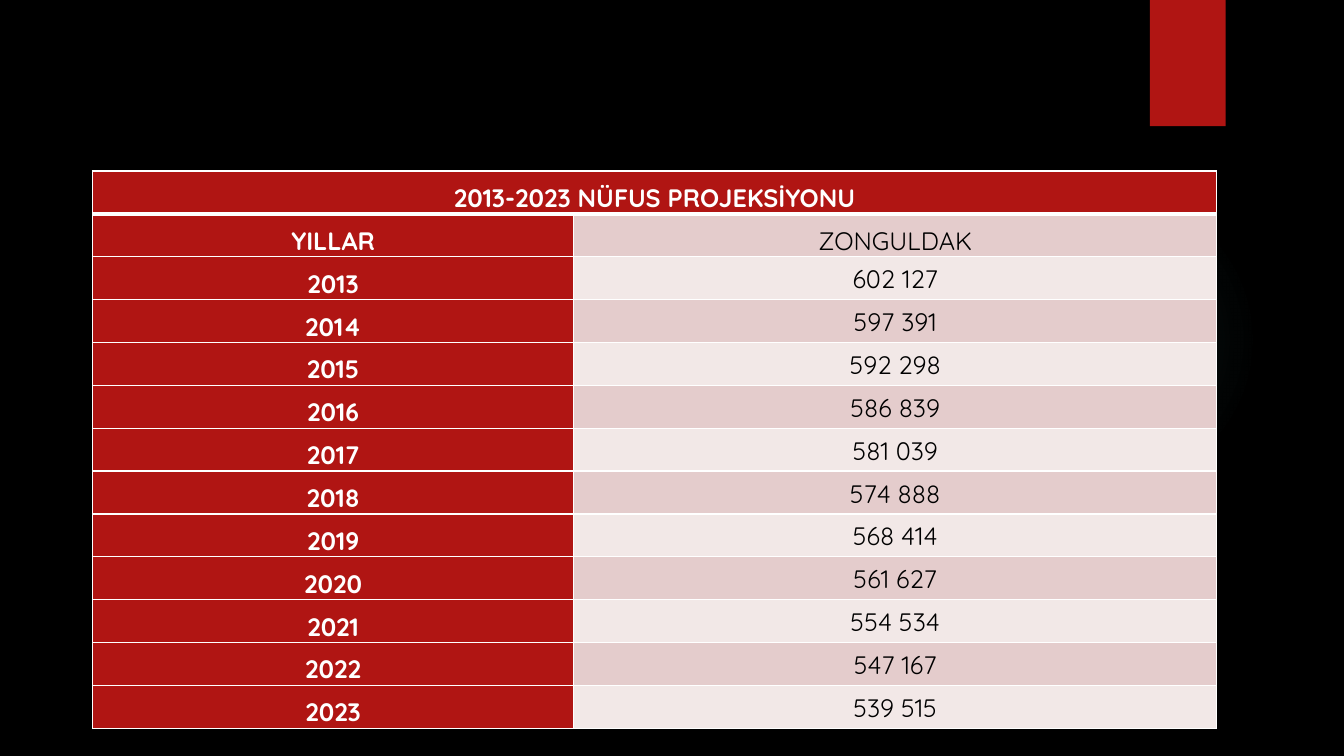
from lxml import etree
from pptx import Presentation
from pptx import util as u
from pptx.dml.color import RGBColor
from pptx.enum import shapes, text
from pptx.oxml import ns

COLORS = {"back": "000000", "red": "B01513", "white": "FFFFFF", "black": "000000",
          "rose": "E4CCCC", "pale": "F2E8E7", "glow": "50B9C1"}
POPULATION = ["602 127", "597 391", "592 298", "586 839", "581 039", "574 888",
              "568 414", "561 627", "554 534", "547 167", "539 515"]
ROWS = [("2013-2023 NÜFUS PROJEKSİYONU", ""), ("YILLAR", "ZONGULDAK")]
ROWS += [(str(year), count) for year, count in enumerate(POPULATION, 2013)]


def add_element(parent, tag, **attributes):
    element = etree.SubElement(parent, ns.qn(tag))
    for name, value in attributes.items():
        element.set(name, str(value))
    return element


def paint(fill, color):
    fill.solid()
    fill.fore_color.rgb = RGBColor.from_string(COLORS[color])


deck = Presentation()
deck.slide_width, deck.slide_height = u.Cm(33.87), u.Cm(19.05)
page = deck.slides.add_slide(deck.slide_layouts[6])
paint(page.background.fill, "back")

# Faint round glow
glow = page.shapes.add_shape(shapes.MSO_SHAPE.OVAL, u.Cm(23.9), u.Cm(4.65), u.Cm(7.82), u.Cm(7.82))
glow.shadow.inherit = False
glow.line.fill.background()
gradient = etree.Element(ns.qn("a:gradFill"))
stops = add_element(gradient, "a:gsLst")
for position, opacity in [(0, 7), (36, 6), (69, 0)]:
    stop = add_element(stops, "a:gs", pos=position * 1000)
    color = add_element(stop, "a:srgbClr", val=COLORS["glow"])
    add_element(color, "a:alpha", val=opacity * 1000)
circle = add_element(gradient, "a:path", path="circle")
add_element(circle, "a:fillToRect", l=50000, t=50000, r=50000, b=50000)
glow.element.spPr.find(ns.qn("a:prstGeom")).addnext(gradient)

# Red tab at the top
tab = page.shapes.add_shape(shapes.MSO_SHAPE.RECTANGLE, u.Cm(28.98), 0, u.Cm(1.91), u.Cm(3.18))
tab.shadow.inherit = False
tab.line.fill.background()
paint(tab.fill, "red")

# Population table
row_height = u.Cm(1.08)
table = page.shapes.add_table(len(ROWS), 2, u.Cm(2.33), u.Cm(4.31), u.Cm(28.33),
                              row_height * len(ROWS)).table
table.columns[0].width, table.columns[1].width = u.Cm(12.13), u.Cm(16.2)
table.cell(0, 0).merge(table.cell(0, 1))

for r, row in enumerate(ROWS):
    table.rows[r].height = row_height
    for c, wording in enumerate(row):
        cell = table.cell(r, c)
        header = r == 0 or c == 0
        cell.margin_left = cell.margin_right = u.Cm(0.13)
        cell.margin_top = cell.margin_bottom = 0
        bottom = header or r == 1
        cell.vertical_anchor = text.MSO_ANCHOR.BOTTOM if bottom else text.MSO_ANCHOR.MIDDLE

        # White borders, thicker under the title
        for side in "LRTB":
            thick = (r, side) in [(0, "B"), (1, "T")]
            line = add_element(cell._tc.get_or_add_tcPr(), f"a:ln{side}", w=u.Pt(3 if thick else 1))
            add_element(add_element(line, "a:solidFill"), "a:srgbClr", val=COLORS["white"])
        paint(cell.fill, "red" if header else "rose" if r % 2 else "pale")

        if wording:
            para = cell.text_frame.paragraphs[0]
            para.alignment = text.PP_ALIGN.CENTER
            para.line_spacing = 1.07
            span = para.add_run()
            span.text = wording
            span.font.name = "Quicksand"
            span.font.size = u.Pt(18)
            span.font.bold = header
            paint(span.font.fill, "white" if header else "black")

deck.save("out.pptx")
